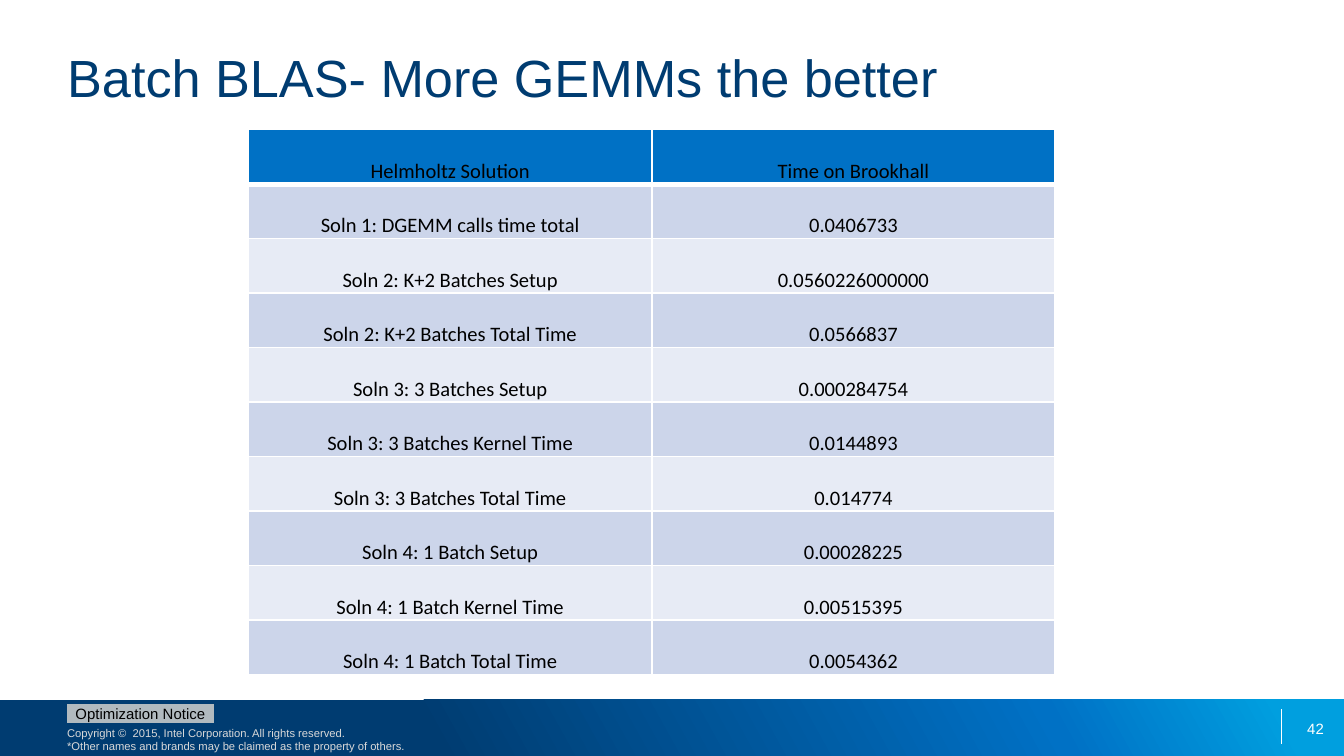
from copy import deepcopy

from lxml.etree import SubElement
from pptx import Presentation
from pptx.dml.color import RGBColor
from pptx.enum.shapes import MSO_CONNECTOR as Connector, MSO_SHAPE as Shape
from pptx.enum.text import MSO_ANCHOR as Anchor, PP_ALIGN as Align
from pptx.oxml.ns import qn
from pptx.util import Cm, Pt

TITLE = "Batch BLAS- More GEMMs the better"
ROWS = [
    ("Helmholtz Solution", "Time on Brookhall"),
    ("Soln 1: DGEMM calls time total", "0.0406733"),
    ("Soln 2: K+2 Batches Setup", "0.0560226000000"),
    ("Soln 2: K+2 Batches Total Time", "0.0566837"),
    ("Soln 3: 3 Batches Setup", "0.000284754"),
    ("Soln 3: 3 Batches Kernel Time", "0.0144893"),
    ("Soln 3: 3 Batches Total Time", "0.014774"),
    ("Soln 4: 1 Batch Setup", "0.00028225"),
    ("Soln 4: 1 Batch Kernel Time", "0.00515395"),
    ("Soln 4: 1 Batch Total Time", "0.0054362"),
]
NOTICE = "Optimization Notice"
COPYRIGHT = [
    "Copyright ©  2015, Intel Corporation. All rights reserved.",
    "*Other names and brands may be claimed as the property of others.",
]
PAGE_NUMBER = "42"
COLORS = {
    "navy": "003C71", "blue": "0071C5", "sky": "009FDF", "white": "FFFFFF",
    "black": "000000", "gray": "B1BABF", "silver": "D9D9D9",
    "odd": "CCD5EA", "even": "E7EBF5",
}
FOOTER_STOPS = [(32, "navy"), (78, "blue"), (95, "sky")]
PAGE_WIDTH, PAGE_HEIGHT = 25.4, 14.29
MARGIN = 1.27
FOOTER_TOP = 13.23
TABLE_LEFT, TABLE_TOP = 4.7, 2.45
COLUMN_WIDTH, ROW_HEIGHT = 7.62, 1.03


def color(name):
    """Return the named colour."""
    return RGBColor.from_string(COLORS[name])


def write(frame, *lines, size, ink, font="Arial", align=Align.LEFT):
    """Write lines, parted by line breaks, into the first paragraph."""
    para = frame.paragraphs[0]
    para.alignment = align
    for index, line in enumerate(lines):
        if index:
            para.add_line_break()
        span = para.add_run()
        span.text = line
        span.font.name, span.font.size = font, Pt(size)
        span.font.color.rgb = color(ink)


def set_frame(frame, anchor=Anchor.TOP, wrap=True):
    """Clear the margins of a text frame and anchor it."""
    frame.margin_left = frame.margin_right = 0
    frame.margin_top = frame.margin_bottom = 0
    frame.vertical_anchor, frame.word_wrap = anchor, wrap


def add_box(page, left, top, width, height, *lines, anchor=Anchor.TOP, wrap=True, **style):
    """Add a text box without margins."""
    box = page.shapes.add_textbox(Cm(left), Cm(top), Cm(width), Cm(height))
    set_frame(box.text_frame, anchor, wrap)
    write(box.text_frame, *lines, **style)


def add_block(page, shape, left, top, width, height):
    """Add a preset shape without line or shadow."""
    block = page.shapes.add_shape(shape, Cm(left), Cm(top), Cm(width), Cm(height))
    block.shadow.inherit = False
    block.line.fill.background()
    return block


def add_footer(page):
    """Draw the gradient band with its notice, copyright and page number."""
    band = add_block(page, Shape.RECTANGLE, 0, FOOTER_TOP, PAGE_WIDTH, PAGE_HEIGHT - FOOTER_TOP)
    band.fill.gradient()
    band.fill.gradient_angle = 29
    stops = band.fill._fill._gradFill.find(qn("a:gsLst"))
    stops.append(deepcopy(stops[-1]))
    for stop, (position, name) in zip(band.fill.gradient_stops, FOOTER_STOPS):
        stop.position = position / 100
        stop.color.rgb = color(name)

    divider = page.shapes.add_connector(
        Connector.STRAIGHT, Cm(24.22), Cm(13.41), Cm(24.22), Cm(14.07))
    divider.line.color.rgb, divider.line.width = color("white"), Pt(0.75)
    SubElement(divider._element.spPr, qn("a:effectLst"))

    add_box(page, MARGIN, 13.72, 6.78, 0.51, *COPYRIGHT, wrap=False, size=6, ink="silver")
    button = add_block(page, Shape.ACTION_BUTTON_CUSTOM, MARGIN, 13.3, 2.77, 0.36)
    button.fill.solid()
    button.fill.fore_color.rgb = color("gray")
    set_frame(button.text_frame, Anchor.MIDDLE, wrap=False)
    write(button.text_frame, NOTICE, size=8, ink="black", align=Align.CENTER)
    add_box(page, 24.23, 13.39, 0.79, 0.76, PAGE_NUMBER, anchor=Anchor.MIDDLE,
            size=8, ink="white", align=Align.RIGHT)


def add_borders(cell, **widths):
    """Give a cell white borders of the given widths in points."""
    for side, width in widths.items():
        line = SubElement(cell._tc.get_or_add_tcPr(), qn(f"a:ln{side}"), w=str(Pt(width)))
        SubElement(SubElement(line, qn("a:solidFill")), qn("a:srgbClr"), val=COLORS["white"])


def add_times(page):
    """Add the table of timings."""
    table = page.shapes.add_table(
        len(ROWS), len(ROWS[0]), Cm(TABLE_LEFT), Cm(TABLE_TOP),
        Cm(COLUMN_WIDTH * len(ROWS[0])), Cm(ROW_HEIGHT * len(ROWS))).table
    for i, texts in enumerate(ROWS):
        table.rows[i].height = Cm(ROW_HEIGHT)
        shade = "blue" if i == 0 else "odd" if i % 2 else "even"
        for j, text in enumerate(texts):
            cell = table.cell(i, j)
            add_borders(cell, L=1, R=1, T=3 if i == 1 else 1, B=3 if i == 0 else 1)
            cell.fill.solid()
            cell.fill.fore_color.rgb = color(shade)
            cell.margin_left = cell.margin_right = cell.margin_top = Cm(0.02)
            cell.margin_bottom = 0
            cell.vertical_anchor = Anchor.BOTTOM
            write(cell.text_frame, text, size=11, ink="black", font="Calibri", align=Align.CENTER)


def main():
    """Build the slide and save the deck."""
    deck = Presentation()
    deck.slide_width, deck.slide_height = Cm(PAGE_WIDTH), Cm(PAGE_HEIGHT)
    page = deck.slides.add_slide(deck.slide_layouts[5])
    add_footer(page)
    title = page.shapes.title
    title.left, title.top, title.width, title.height = Cm(MARGIN), Cm(0.86), Cm(22.86), Cm(2.41)
    set_frame(title.text_frame)
    write(title.text_frame, TITLE, size=28, ink="navy")
    add_times(page)
    deck.save("out.pptx")


if __name__ == "__main__":
    main()
